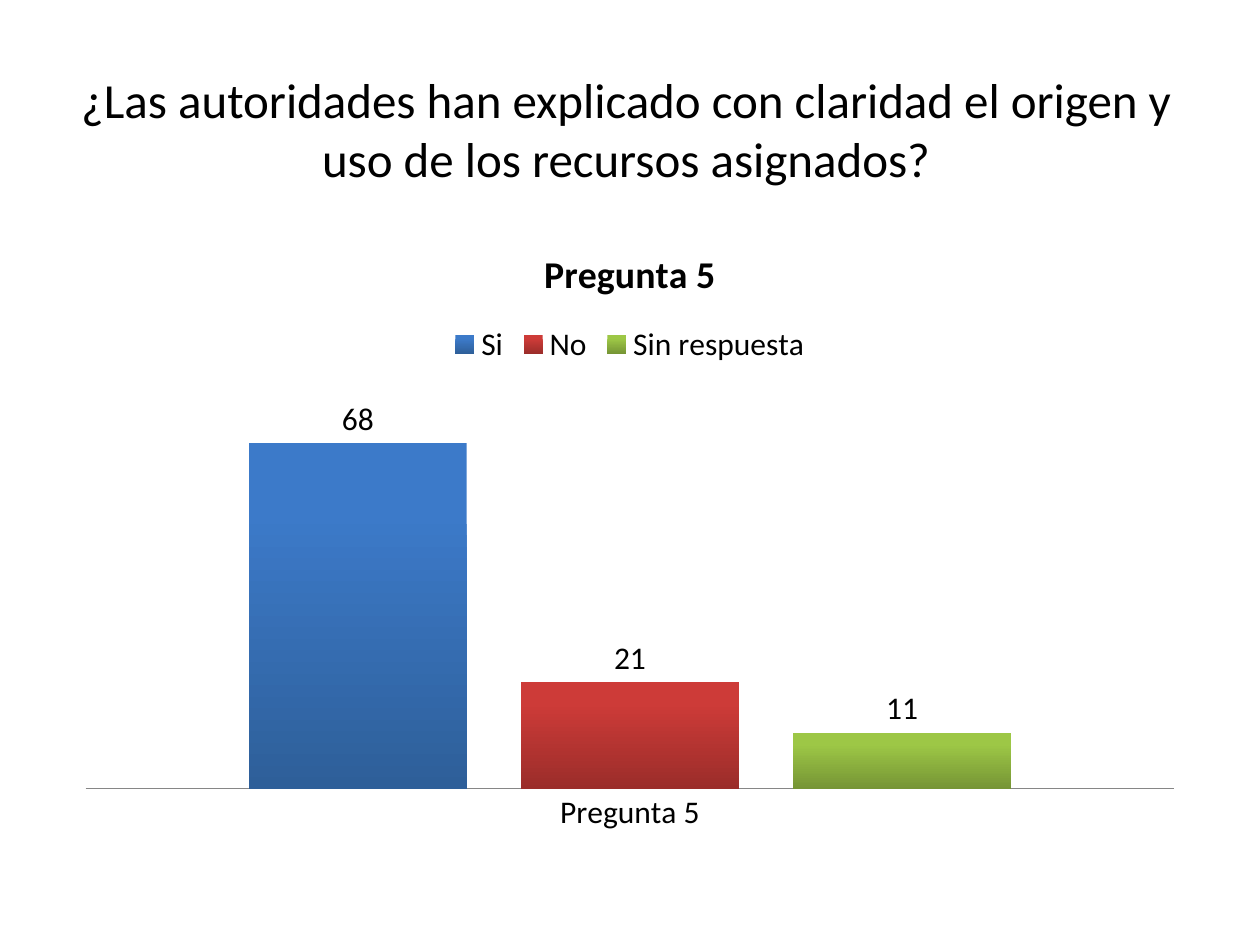
from pptx import Presentation
from pptx.chart.data import CategoryChartData
from pptx.dml.color import RGBColor
from pptx.enum.chart import (XL_CHART_TYPE, XL_LABEL_POSITION,
                             XL_LEGEND_POSITION, XL_TICK_MARK)
from pptx.enum.text import MSO_ANCHOR, PP_ALIGN
from pptx.util import Cm, Pt

# Content
TITLE = "¿Las autoridades han explicado con claridad el origen y uso de los recursos asignados?"
QUESTION = "Pregunta 5"
ANSWERS = [("Si", 68), ("No", 21), ("Sin respuesta", 11)]

FONT = "Calibri"
COLORS = {"text": "000000", "axis": "868686"}
GRADIENTS = {  # top and bottom of each bar
    "Si": ("3C7AC9", "2E5F99"),
    "No": ("CD3B38", "9B2D2A"),
    "Sin respuesta": ("9DC746", "769535"),
}


def rgb(name):
    return RGBColor.from_string(COLORS[name])


def style_font(font, size, bold=False):
    font.name, font.size, font.bold = FONT, Pt(size), bold
    font.color.rgb = rgb("text")


prs = Presentation()
prs.slide_width, prs.slide_height = Cm(25.4), Cm(19.05)
s = prs.slides.add_slide(prs.slide_layouts[6])

# Slide title
tf = s.shapes.add_textbox(Cm(1.19), Cm(1), Cm(22.86), Cm(3.17)).text_frame
tf.word_wrap = True
tf.vertical_anchor = MSO_ANCHOR.MIDDLE
p = tf.paragraphs[0]
p.alignment = PP_ALIGN.CENTER
r = p.add_run()
r.text = TITLE
style_font(r.font, 28)

# Chart
data = CategoryChartData()
data.categories = [QUESTION]
for name, value in ANSWERS:
    data.add_series(name, [value])
chart = s.shapes.add_chart(XL_CHART_TYPE.COLUMN_CLUSTERED, Cm(1.27), Cm(4.45),
                           Cm(22.86), Cm(12.57), data).chart
style_font(chart.font, 18)

# Chart title and legend
p = chart.chart_title.text_frame.paragraphs[0]
r = p.add_run()
r.text = QUESTION
style_font(r.font, 21.6, bold=True)
chart.has_legend = True
chart.legend.position = XL_LEGEND_POSITION.TOP
chart.legend.include_in_layout = False

# Axes
axis = chart.category_axis
axis.major_tick_mark = XL_TICK_MARK.NONE
axis.format.line.color.rgb = rgb("axis")
axis.format.line.width = Pt(0.75)
axis = chart.value_axis
axis.has_major_gridlines = False
axis.minimum_scale, axis.maximum_scale = 0, 80
axis.visible = False

# Bars and their labels
plot = chart.plots[0]
plot.gap_width, plot.overlap = 150, -25
plot.vary_by_categories = False
for series in plot.series:
    fill = series.format.fill
    fill.gradient()
    fill.gradient_angle = 270
    for stop, color, position in zip(fill.gradient_stops, GRADIENTS[series.name], (0.2, 1)):
        stop.color.rgb = RGBColor.from_string(color)
        stop.position = position
    labels = series.data_labels
    labels.show_value = True
    labels.position = XL_LABEL_POSITION.OUTSIDE_END
    style_font(labels.font, 18)

prs.save("out.pptx")
